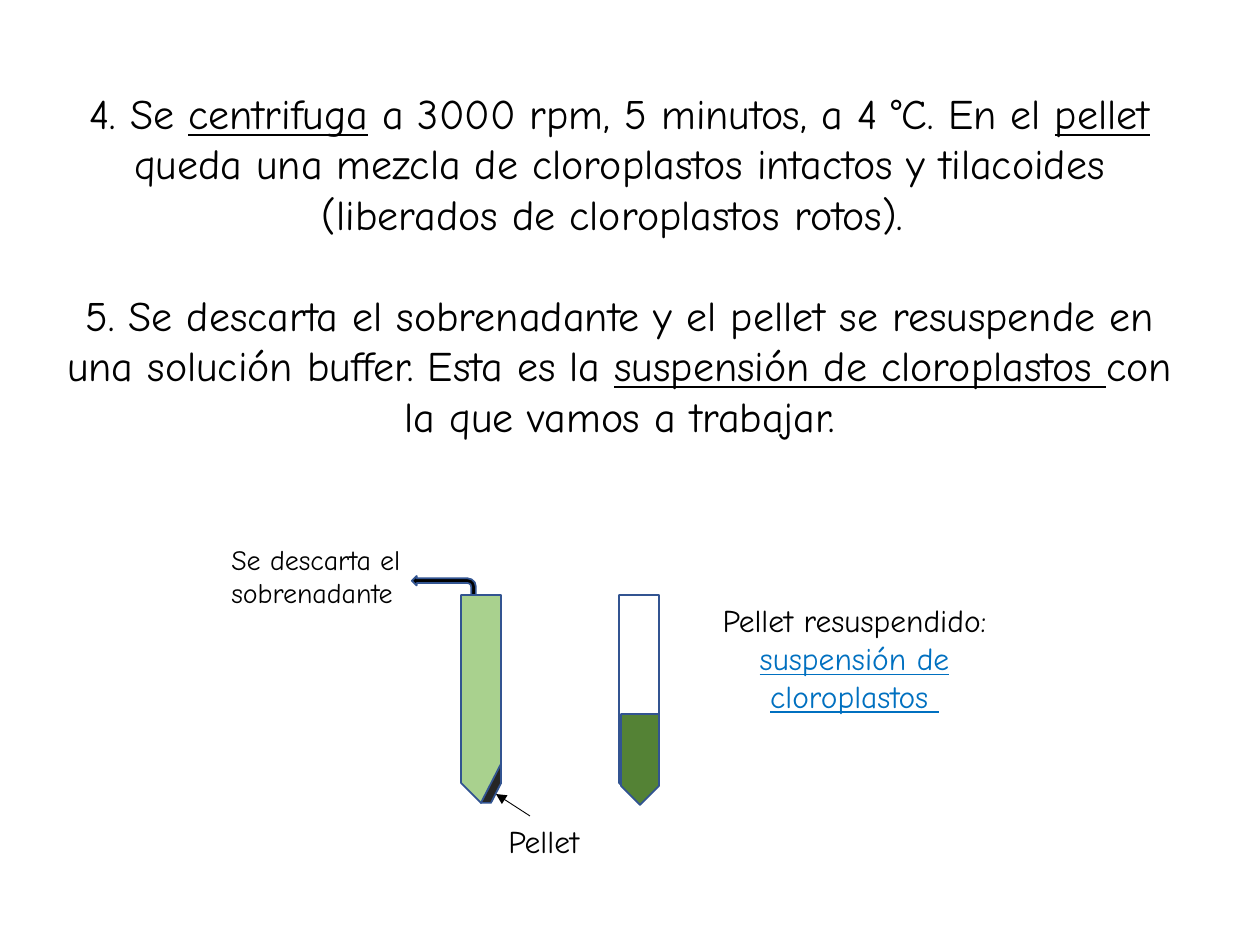
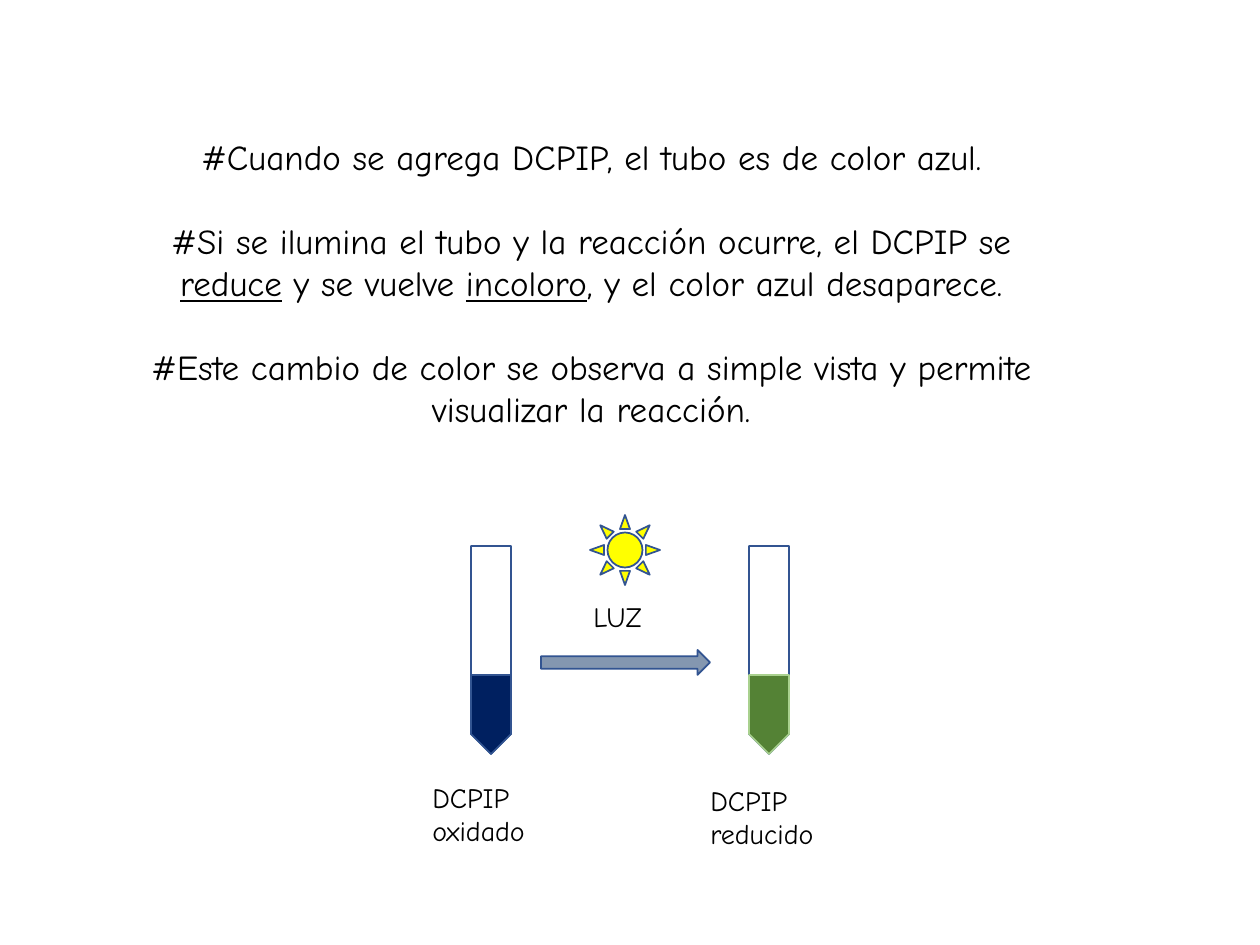
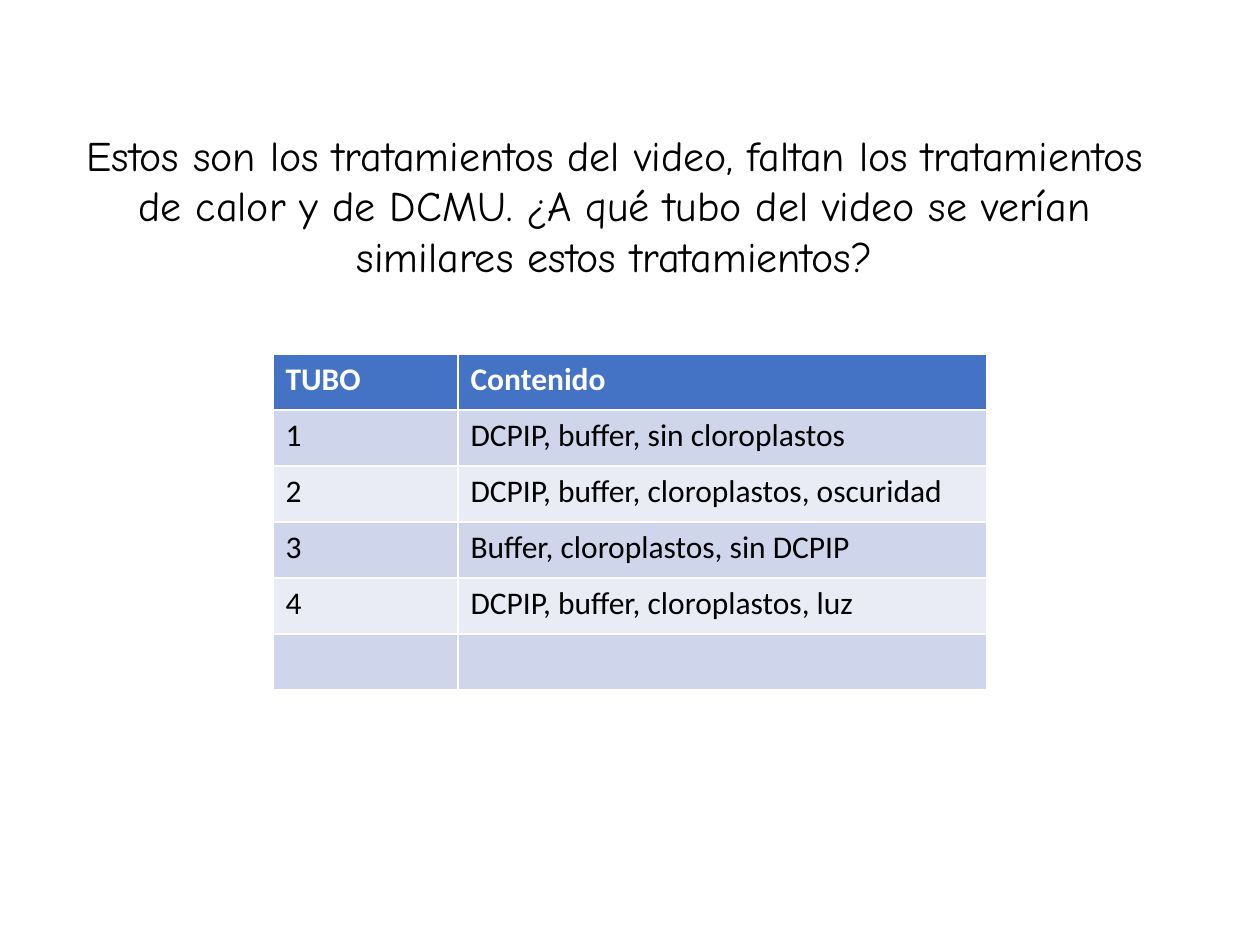
from pptx import Presentation
from pptx import util as u
from pptx.dml.color import RGBColor
from pptx.enum import shapes as kinds, text as layout_text
from pptx.oxml import xmlchemy
from lxml import etree

PX = 914400 / 126
FONT = "Comic Neue"
TABLE_FONT = "Calibri"
TUBE_WIDTH, TUBE_HEIGHT = 40, 208
TITLE_AND_BODY, TITLE_ONLY = 1, 5

COLOURS = {
    "ink": "000000",
    "white": "FFFFFF",
    "outline": "325491",
    "link": "0070C0",
    "supernatant": "A9D18E",
    "pellet": "262626",
    "chloroplasts": "548235",
    "oxidised": "002060",
    "arrow": "8497B0",
    "sun": "FFFF00",
    "header": "4472C4",
    "odd_row": "CFD5EA",
    "even_row": "E9EBF5",
}

STEPS = [
    [("4. Se ", False), ("centrifuga", True),
     (" a 3000 rpm, 5 minutos, a 4 °C. En el ", False), ("pellet", True),
     (" queda una mezcla de cloroplastos intactos y tilacoides "
      "(liberados de cloroplastos rotos). ", False)],
    [("5. Se descarta el sobrenadante y el pellet se resuspende en una "
      "solución buffer. Esta es la ", False),
     ("suspensión de cloroplastos ", True),
     ("con la que vamos a trabajar.", False)],
]

DCPIP_NOTES = [
    [("#Cuando se agrega DCPIP, el tubo es de color azul.", False)],
    [("#Si se ilumina el tubo y la reacción ocurre, el DCPIP se ", False),
     ("reduce", True), (" y se vuelve ", False), ("incoloro", True),
     (", y el color azul desaparece.", False)],
    [("#Este cambio de color se observa a simple vista y permite "
      "visualizar la reacción.", False)],
]

QUESTION = [[("Estos son los tratamientos del video, faltan los tratamientos "
              "de calor y de DCMU. ¿A qué tubo del video se verían similares "
              "estos tratamientos?", False)]]

TREATMENTS = [
    ("TUBO", "Contenido"),
    ("1", "DCPIP, buffer, sin cloroplastos"),
    ("2", "DCPIP, buffer, cloroplastos, oscuridad"),
    ("3", "Buffer, cloroplastos, sin DCPIP"),
    ("4", "DCPIP, buffer, cloroplastos, luz"),
    ("", ""),
]


def px(*lengths):
    """Turn pixel lengths into EMU."""
    return [u.Emu(round(length * PX)) for length in lengths]


def colour(name):
    return RGBColor.from_string(COLOURS[name])


def add_run(paragraph, words, size, underlined=False, ink="ink", font=FONT, bold=False):
    run = paragraph.add_run()
    run.text = words
    run.font.name = font
    run.font.size = u.Pt(size)
    run.font.bold = bold
    run.font.underline = underlined
    run.font.color.rgb = colour(ink)


def fill_placeholder(placeholder, box, paragraphs, size, gap=0):
    """Move a placeholder and write centred, unbulleted paragraphs in it."""
    placeholder.left, placeholder.top, placeholder.width, placeholder.height = px(*box)
    frame = placeholder.text_frame
    frame.word_wrap = True
    frame.auto_size = layout_text.MSO_AUTO_SIZE.NONE
    frame.vertical_anchor = layout_text.MSO_ANCHOR.TOP
    for index, runs in enumerate(paragraphs):
        paragraph = frame.add_paragraph() if index else frame.paragraphs[0]
        properties = paragraph._p.get_or_add_pPr()
        properties.set("marL", "0")
        properties.set("indent", "0")
        etree.SubElement(properties, xmlchemy.qn("a:buNone"))
        paragraph.alignment = layout_text.PP_ALIGN.CENTER
        paragraph.space_before = u.Pt(gap if index else 0)
        for words, underlined in runs:
            add_run(paragraph, words, size, underlined)


def add_body_slide(presentation, box, paragraphs, size, gap):
    slide = presentation.slides.add_slide(presentation.slide_layouts[TITLE_AND_BODY])
    title = slide.shapes.title._element
    title.getparent().remove(title)
    fill_placeholder(slide.placeholders[1], box, paragraphs, size, gap)
    return slide


def add_label(shapes, box, lines, size):
    text_box = shapes.add_textbox(*px(*box))
    frame = text_box.text_frame
    frame.word_wrap = True
    for index, line in enumerate(lines):
        paragraph = frame.add_paragraph() if index else frame.paragraphs[0]
        add_run(paragraph, line, size)
    return frame


def add_figure(shapes, kind, box, fill=None, outline="outline"):
    figure = shapes.add_shape(kind, *px(*box))
    figure.shadow.inherit = False
    if fill:
        figure.fill.solid()
        figure.fill.fore_color.rgb = colour(fill)
    else:
        figure.fill.background()
    figure.line.color.rgb = colour(outline)
    figure.line.width = u.Pt(1)
    return figure


def add_tube(shapes, left, top, height=TUBE_HEIGHT, fill=None, outline="outline",
             width=TUBE_WIDTH):
    """Stand a pentagon on its point, filling the box as it shows."""
    shift = (height - width) / 2
    box = (left - shift, top + shift, height, width)
    tube = add_figure(shapes, kinds.MSO_SHAPE.PENTAGON, box, fill, outline)
    tube.rotation = 90


def flip(shape, *directions):
    for direction in directions:
        shape._element.spPr.xfrm.set(direction, "1")


def add_pointer(shapes, start, end):
    pointer = shapes.add_connector(kinds.MSO_CONNECTOR.STRAIGHT, *px(*start, *end))
    pointer.line.color.rgb = colour("ink")
    pointer.line.width = u.Pt(0.5)
    line = pointer.line._get_or_add_ln()
    etree.SubElement(line, xmlchemy.qn("a:tailEnd"), type="triangle")
    etree.SubElement(pointer._element.spPr, xmlchemy.qn("a:effectLst"))


def draw_centrifuge_tubes(slide, left, top):
    shapes = slide.shapes.add_group_shape().shapes
    tube_left, tube_top = left + 242, top + 59
    second_left = tube_left + 158
    add_tube(shapes, tube_left, tube_top, fill="supernatant")
    add_tube(shapes, second_left, tube_top)
    pellet = add_figure(shapes, kinds.MSO_SHAPE.DIAGONAL_STRIPE,
                        (tube_left + 20, tube_top + 169, 20, 39), "pellet")
    flip(pellet, "flipH", "flipV")
    add_label(shapes, (left + 277, top + 280, 118, 50), ["Pellet"], 18)
    add_pointer(shapes, (left + 311, top + 280), (left + 277, top + 258))
    result = add_label(shapes, (left + 470, top + 59, 331, 127),
                       ["Pellet resuspendido: "], 18).paragraphs[0]
    result.alignment = layout_text.PP_ALIGN.CENTER
    add_run(result, "suspensión de cloroplastos ", 18, True, "link")
    add_tube(shapes, second_left + 2, tube_top + 119, 91, "chloroplasts", width=38)
    outflow = add_figure(shapes, kinds.MSO_SHAPE.BENT_ARROW,
                         (left + 193, top + 40, 64, 19), "ink")
    flip(outflow, "flipH")
    add_label(shapes, (left, top, 237, 81), ["Se descarta el sobrenadante"], 16)


def draw_light_reaction(slide, left, top):
    shapes = slide.shapes.add_group_shape().shapes
    states = [("oxidado", "oxidised", "outline", 259),
              ("reducido", "chloroplasts", "supernatant", 262)]
    for index, (state, liquid, outline, label_top) in enumerate(states):
        state_left = left + index * 278
        add_tube(shapes, state_left + 51, top + 31)
        add_tube(shapes, state_left + 51, top + 160, 79, liquid, outline)
        add_label(shapes, (state_left, top + label_top, 144, 81), ["DCPIP", state], 16)
    add_figure(shapes, kinds.MSO_SHAPE.RIGHT_ARROW, (left + 121, top + 135, 169, 25), "arrow")
    add_figure(shapes, kinds.MSO_SHAPE.SUN, (left + 170, top, 70, 70), "sun")
    add_label(shapes, (left + 161, top + 78, 100, 47), ["LUZ"], 16)


def add_treatment_table(slide, left, top, column_widths=(185, 529), row_height=56):
    height = row_height * len(TREATMENTS)
    table = slide.shapes.add_table(len(TREATMENTS), len(column_widths),
                                   *px(left, top, sum(column_widths), height)).table
    for column, width in zip(table.columns, column_widths):
        column.width = px(width)[0]
    for row_index, row in enumerate(TREATMENTS):
        is_header = row_index == 0
        fill = "header" if is_header else "odd_row" if row_index % 2 else "even_row"
        for column_index, words in enumerate(row):
            cell = table.cell(row_index, column_index)
            cell.fill.solid()
            cell.fill.fore_color.rgb = colour(fill)
            if words:
                add_run(cell.text_frame.paragraphs[0], words, 18, font=TABLE_FONT,
                        ink="white" if is_header else "ink", bold=is_header)


def add_question_slide(presentation):
    slide = presentation.slides.add_slide(presentation.slide_layouts[TITLE_ONLY])
    fill_placeholder(slide.shapes.title, (59, 123, 1111, 257), QUESTION, 24)
    add_treatment_table(slide, 273, 354)


def main():
    presentation = Presentation()
    presentation.slide_width, presentation.slide_height = px(1260, 945)
    steps = add_body_slide(presentation, (54, 81, 1131, 369), STEPS, 24, gap=29)
    draw_centrifuge_tubes(steps, 219, 536)
    notes = add_body_slide(presentation, (105, 129, 973, 348), DCPIP_NOTES, 20, gap=24)
    draw_light_reaction(notes, 420, 515)
    add_question_slide(presentation)
    presentation.save("out.pptx")


if __name__ == "__main__":
    main()
